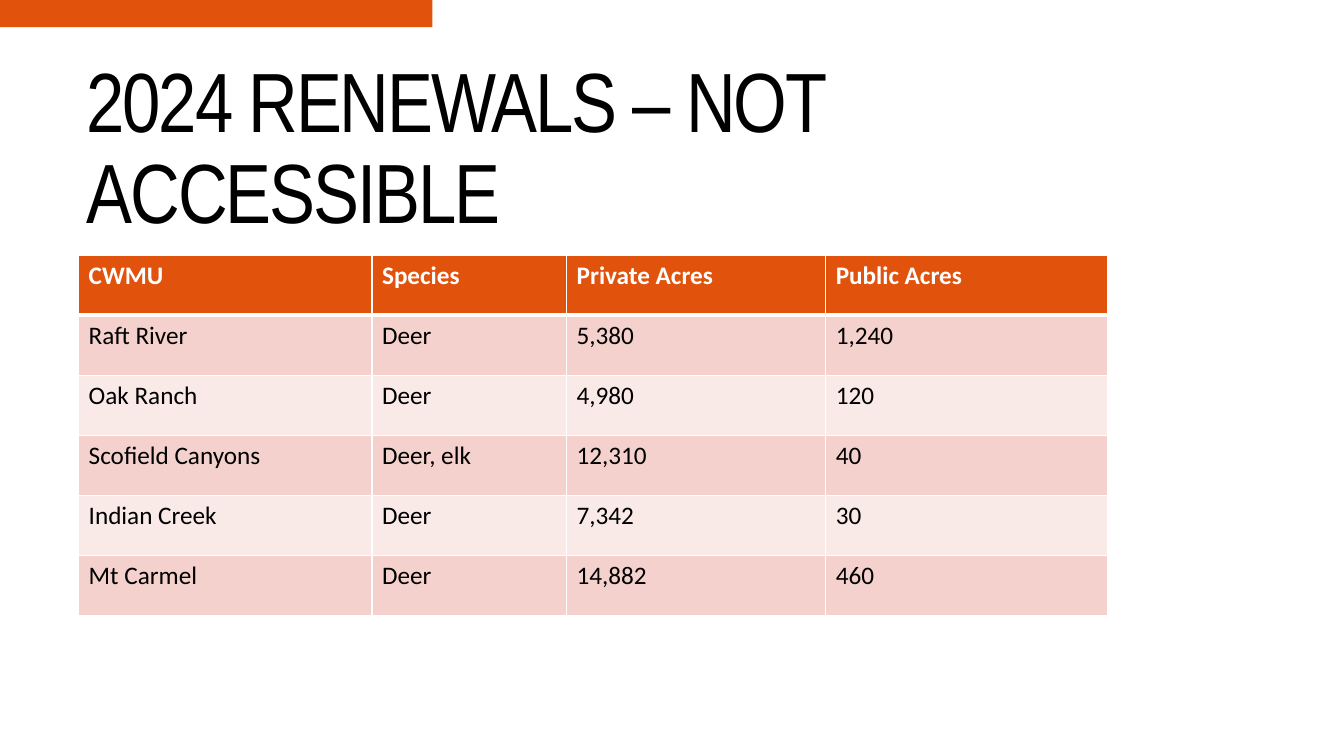
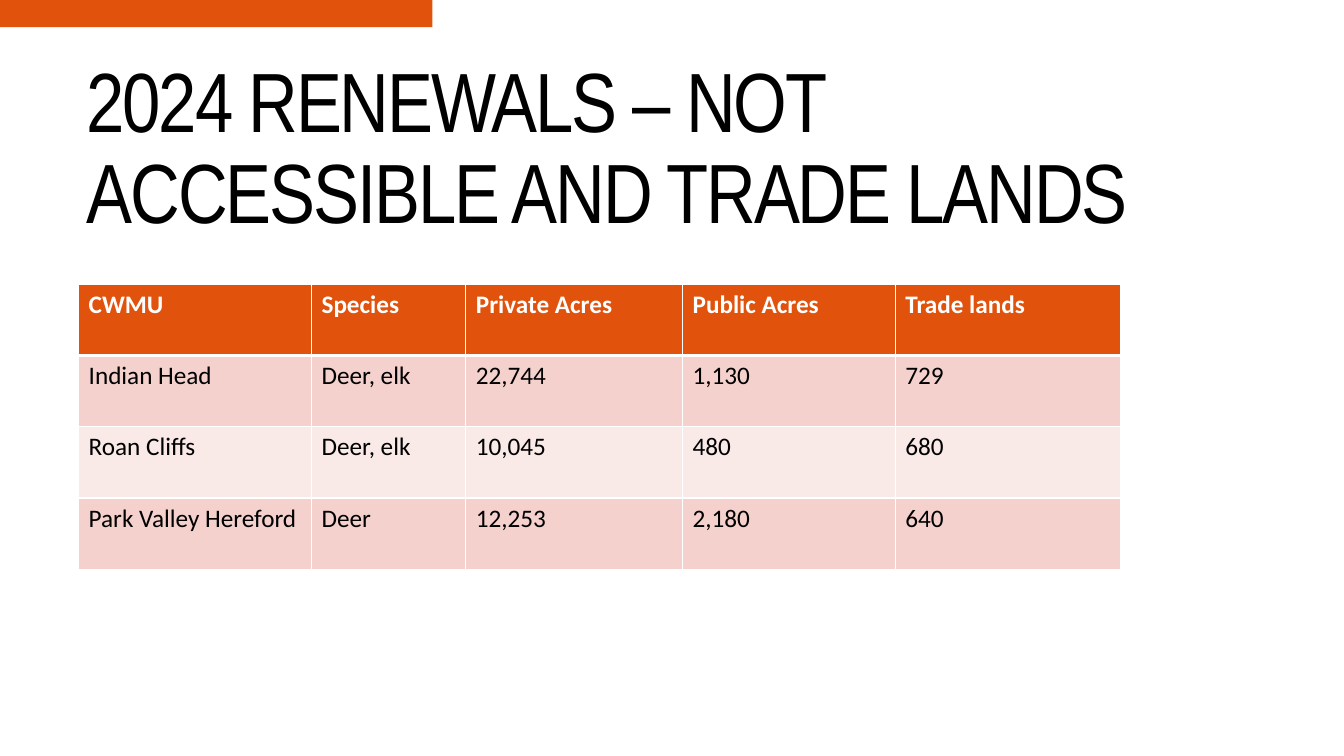
from lxml.etree import SubElement
from pptx import Presentation
from pptx.dml.color import RGBColor
from pptx.enum.shapes import MSO_SHAPE
from pptx.enum.text import MSO_ANCHOR
from pptx.oxml.ns import qn
from pptx.util import Inches, Pt

COLORS = {
    "accent": "E1530D",
    "band_dark": "F4D1CC",
    "band_light": "F9E9E7",
    "text": "000000",
    "white": "FFFFFF",
}
TITLE_FONT, BODY_FONT = "Arial Narrow", "Calibri"


def rgb(name):
    return RGBColor.from_string(COLORS[name])


class Deck:
    """Shared style and current slide; lengths are percentages of the slide."""

    def __init__(self):
        self.prs = Presentation()
        self.prs.slide_width = Inches(13.33)
        self.prs.slide_height = Inches(7.5)
        self.s = None

    def x(self, share):
        return round(self.prs.slide_width * share / 100)

    def y(self, share):
        return round(self.prs.slide_height * share / 100)

    def box(self, left, top, width, height):
        return self.x(left), self.y(top), self.x(width), self.y(height)

    def slide(self, title):
        self.s = self.prs.slides.add_slide(self.prs.slide_layouts[6])
        self.band()
        self.title(title)

    def band(self):
        sp = self.s.shapes.add_shape(MSO_SHAPE.RECTANGLE, *self.box(0, 0, 32.17, 3.6))
        sp.shadow.inherit = False
        sp.fill.solid()
        sp.fill.fore_color.rgb = rgb("accent")
        sp.line.fill.background()

    def run(self, p, text, font, size, color, bold=False):
        r = p.add_run()
        r.text = text
        r.font.name = font
        r.font.size = Pt(size)
        r.font.bold = bold
        r.font.color.rgb = rgb(color)
        return r

    def title(self, text):
        tf = self.s.shapes.add_textbox(*self.box(5.7, 4.27, 82.05, 31.33)).text_frame
        tf.word_wrap = True
        tf.vertical_anchor = MSO_ANCHOR.MIDDLE
        p = tf.paragraphs[0]
        p.line_spacing = 0.9
        r = self.run(p, text, TITLE_FONT, 60, "text")
        r.font._element.set("spc", "-150")

    def borders(self, cell, top, bottom):
        tc_pr = cell._tc.get_or_add_tcPr()
        for side, width in (("L", 1), ("R", 1), ("T", top), ("B", bottom)):
            ln = SubElement(tc_pr, qn(f"a:ln{side}"), w=str(Pt(width)))
            fill = SubElement(ln, qn("a:solidFill"))
            SubElement(fill, qn("a:srgbClr"), val=COLORS["white"])

    def table(self, top, col_widths, row_height, rows):
        frame = self.s.shapes.add_table(
            len(rows), len(col_widths),
            *self.box(5.85, top, sum(col_widths), row_height * len(rows)))
        table = frame.table
        for col, width in zip(table.columns, col_widths):
            col.width = self.x(width)
        for i, values in enumerate(rows):
            table.rows[i].height = self.y(row_height)
            header = i == 0
            band = "accent" if header else "band_dark" if i % 2 else "band_light"
            for j, value in enumerate(values):
                cell = table.cell(i, j)
                # Heavy rule between the header and the first body row
                self.borders(cell, 3 if i == 1 else 1, 3 if header else 1)
                cell.fill.solid()
                cell.fill.fore_color.rgb = rgb(band)
                self.run(cell.text_frame.paragraphs[0], value, BODY_FONT, 18,
                         "white" if header else "text", header)


def main():
    deck = Deck()
    header = ["CWMU", "Species", "Private Acres", "Public Acres"]

    # Renewals without accessible public land
    deck.slide("2024 RENEWALS – NOT ACCESSIBLE")
    deck.table(33.73, [21.83, 14.48, 19.28, 21], 7.95, [
        header,
        ["Raft River", "Deer", "5,380", "1,240"],
        ["Oak Ranch", "Deer", "4,980", "120"],
        ["Scofield Canyons", "Deer, elk", "12,310", "40"],
        ["Indian Creek", "Deer", "7,342", "30"],
        ["Mt Carmel", "Deer", "14,882", "460"],
    ])

    # Renewals that also hold trade lands
    deck.slide("2024 RENEWALS – NOT ACCESSIBLE AND TRADE LANDS")
    deck.table(37.6, [17.33, 11.48, 16.13, 15.83, 16.73], 9.43, [
        header + ["Trade lands"],
        ["Indian Head", "Deer, elk", "22,744", "1,130", "729"],
        ["Roan Cliffs", "Deer, elk", "10,045", "480", "680"],
        ["Park Valley Hereford", "Deer", "12,253", "2,180", "640"],
    ])

    deck.prs.save("out.pptx")


if __name__ == "__main__":
    main()
